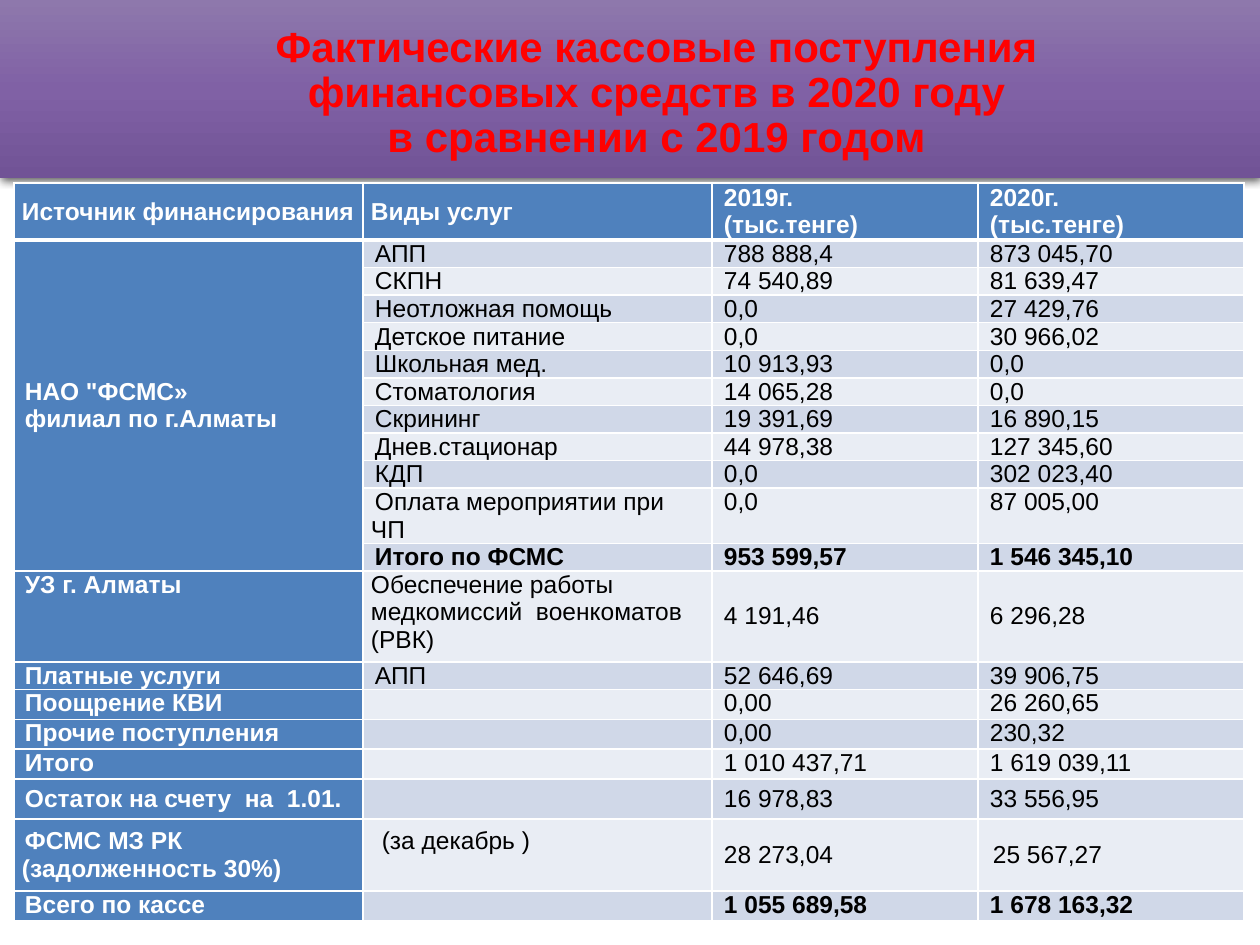
"""Build the slide comparing cash receipts of 2020 with 2019."""
import copy

import pptx
import pptx.dml.color
import pptx.enum.shapes
import pptx.enum.text
import pptx.util
from lxml import etree

PX = 914400 / 126
A = "{http://schemas.openxmlformats.org/drawingml/2006/main}"
FONT = "Arial"
COLORS = {
    "title": "FF0000", "head": "4F81BD", "head_text": "FFFFFF", "text": "000000",
    "odd": "D0D8E8", "even": "E9EDF4", "border": "FFFFFF", "shadow": "000000",
}
BANNER_STOPS = [(0, "8E78AC"), (0.5, "8061A5"), (1, "715396")]

TITLE = ["Фактические кассовые поступления", "финансовых средств в 2020 году", "в сравнении с 2019 годом"]
COLUMN_WIDTHS = [349, 349, 266, 266]
ROW_HEIGHT = 24
ROWS = [
    ("Источник финансирования", "Виды услуг", "2019г.\n(тыс.тенге)", "2020г.\n(тыс.тенге)"),
    ('НАО "ФСМС»\nфилиал по г.Алматы', "АПП", "788 888,4", "873 045,70"),
    ("", "СКПН", "74 540,89", "81 639,47"),
    ("", "Неотложная помощь", "0,0", "27 429,76"),
    ("", "Детское питание", "0,0", "30 966,02"),
    ("", "Школьная мед.", "10 913,93", "0,0"),
    ("", "Стоматология", "14 065,28", "0,0"),
    ("", "Скрининг", "19 391,69", "16 890,15"),
    ("", "Днев.стационар", "44 978,38", "127 345,60"),
    ("", "КДП", "0,0", "302 023,40"),
    ("", "Оплата мероприятии при ЧП", "0,0", "87 005,00"),
    ("", "Итого по ФСМС", "953 599,57", "1 546 345,10"),
    ("УЗ г. Алматы", "Обеспечение работы медкомиссий  военкоматов (РВК)", "4 191,46", "6 296,28"),
    ("Платные услуги", "АПП", "52 646,69", "39 906,75"),
    ("Поощрение КВИ", "", "0,00", "26 260,65"),
    ("Прочие поступления", "", "0,00", "230,32"),
    ("Итого", "", "1 010 437,71", "1 619 039,11"),
    ("Остаток на счету  на  1.01.", "", "16 978,83", "33 556,95"),
    ("ФСМС МЗ РК (задолженность 30%)", " (за декабрь )", "28 273,04", "25 567,27"),
    ("Всего по кассе", "", "1 055 689,58", "1 678 163,32"),
]
FUND_ROWS = (1, 11)
CLINIC_ROW, DEBT_ROW, TOTAL_ROW = 12, 18, 19
TALL_ROWS = {0: 57, 10: 35, CLINIC_ROW: 91, 17: 40, DEBT_ROW: 72}
BOLD_ROWS = {0, FUND_ROWS[1], TOTAL_ROW}
MIDDLE_ROWS = {0, 3, 17, DEBT_ROW}
MIDDLE_CELLS = {(1, 0), (CLINIC_ROW, 2), (CLINIC_ROW, 3)}
FLUSH_CELLS = {(0, 0), (0, 1), (CLINIC_ROW, 1)}


def px(length):
    return pptx.util.Emu(int(length * PX))


def rgb(name):
    return pptx.dml.color.RGBColor.from_string(COLORS[name])


def style_run(run, size, color, bold):
    run.font.name = FONT
    run.font.size = pptx.util.Pt(size)
    run.font.bold = bold
    run.font.color.rgb = rgb(color)


def add_banner(slide):
    banner = slide.shapes.add_shape(
        pptx.enum.shapes.MSO_SHAPE.RECTANGLE, 0, 0, px(1260), px(178))
    banner.line.fill.background()
    banner.fill.gradient()
    banner.fill.gradient_angle = 270
    stop_list = banner._element.spPr.find(f".//{A}gsLst")
    template = copy.deepcopy(stop_list[0])
    for stop in list(stop_list):
        stop_list.remove(stop)
    for _ in BANNER_STOPS:
        stop_list.append(copy.deepcopy(template))
    for stop, (position, color) in zip(banner.fill.gradient_stops, BANNER_STOPS):
        stop.position = position
        stop.color.rgb = pptx.dml.color.RGBColor.from_string(color)
    banner.shadow.inherit = False
    shadow = etree.SubElement(
        banner._element.spPr.find(f"{A}effectLst"), f"{A}outerShdw",
        blurRad="57150", dist="19050", dir="5400000", algn="ctr", rotWithShape="0")
    shade = etree.SubElement(shadow, f"{A}srgbClr", val=COLORS["shadow"])
    etree.SubElement(shade, f"{A}alpha", val="63000")
    return banner


def add_title(slide):
    title = slide.shapes.title
    title.left, title.top, title.width, title.height = map(px, (53, 23, 1207, 142))
    title.text_frame.word_wrap = True
    title.text_frame.vertical_anchor = pptx.enum.text.MSO_ANCHOR.MIDDLE
    heading = title.text_frame.paragraphs[0]
    heading.alignment = pptx.enum.text.PP_ALIGN.CENTER
    heading.line_spacing = 0.9
    for index, line in enumerate(TITLE):
        if index:
            heading.add_line_break()
        run = heading.add_run()
        run.text = line
        style_run(run, 24, "title", True)
    return title


def add_borders(cell, row):
    properties = cell._tc.get_or_add_tcPr()
    for side in "LRTB":
        thick = (row, side) in {(0, "B"), (1, "T")}
        line = etree.SubElement(properties, f"{A}ln{side}", w="38100" if thick else "12700")
        fill = etree.SubElement(line, f"{A}solidFill")
        etree.SubElement(fill, f"{A}srgbClr", val=COLORS["border"])


def fill_cell(cell, row, column, text):
    is_head = row == 0 or column == 0
    add_borders(cell, row)
    cell.fill.solid()
    cell.fill.fore_color.rgb = rgb("head" if is_head else "odd" if row % 2 else "even")
    cell.margin_left = cell.margin_right = px(8)
    cell.margin_top = 0
    cell.margin_bottom = px(28 if (row, column) == (DEBT_ROW, 1) else 0)
    middle = row in MIDDLE_ROWS or (row, column) in MIDDLE_CELLS
    anchors = pptx.enum.text.MSO_ANCHOR
    cell.vertical_anchor = anchors.MIDDLE if middle else anchors.TOP
    indent = 0 if (row, column) in FLUSH_CELLS else 3 if column == 0 else 4
    for index, line in enumerate(text.split("\n")):
        frame = cell.text_frame
        paragraph = frame.add_paragraph() if index else frame.paragraphs[0]
        if not line:
            etree.SubElement(paragraph._p, f"{A}endParaRPr", sz="1400")
            continue
        settings = paragraph._p.get_or_add_pPr()
        settings.set("marL", str(px(3 if (row, column) == (DEBT_ROW, 3) else 0)))
        settings.set("indent", str(px(indent)))
        run = paragraph.add_run()
        run.text = line
        style_run(run, 14, "head_text" if is_head else "text", is_head or row in BOLD_ROWS)


def add_receipts(slide):
    heights = [TALL_ROWS.get(row, ROW_HEIGHT) for row in range(len(ROWS))]
    receipts = slide.shapes.add_table(
        len(ROWS), len(COLUMN_WIDTHS), px(14), px(183),
        px(sum(COLUMN_WIDTHS)), px(sum(heights))).table
    for column, width in zip(receipts.columns, COLUMN_WIDTHS):
        column.width = px(width)
    for row, height in zip(receipts.rows, heights):
        row.height = px(height)
    for row, texts in enumerate(ROWS):
        for column, text in enumerate(texts):
            fill_cell(receipts.cell(row, column), row, column, text)
    first, last = FUND_ROWS
    receipts.cell(first, 0).merge(receipts.cell(last, 0))


def main():
    deck = pptx.Presentation()
    deck.slide_width, deck.slide_height = px(1260), px(945)
    slide = deck.slides.add_slide(deck.slide_layouts[5])
    title = add_title(slide)
    banner = add_banner(slide)
    title._element.addprevious(banner._element)
    add_receipts(slide)
    deck.save("out.pptx")


if __name__ == "__main__":
    main()
